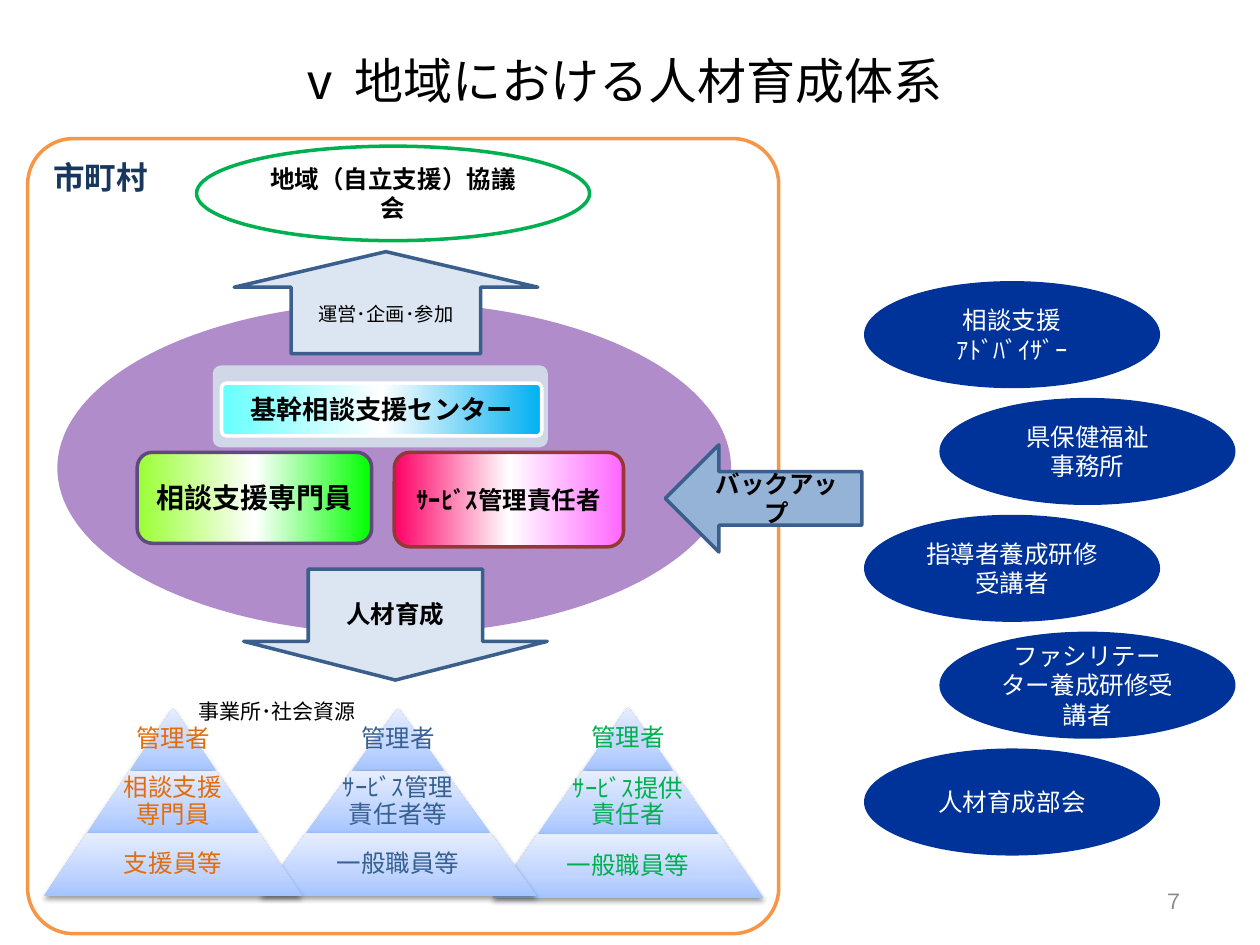
from lxml import etree
from pptx import Presentation
from pptx.dml.color import RGBColor
from pptx.enum.shapes import MSO_SHAPE
from pptx.enum.text import MSO_ANCHOR, PP_ALIGN
from pptx.oxml.ns import qn
from pptx.util import Pt

ELLIPSE = MSO_SHAPE.OVAL
ROUNDED = MSO_SHAPE.ROUNDED_RECTANGLE
TRAPEZOID = MSO_SHAPE.TRAPEZOID
UP_ARROW = MSO_SHAPE.UP_ARROW
DOWN_ARROW = MSO_SHAPE.DOWN_ARROW
LEFT_ARROW = MSO_SHAPE.LEFT_ARROW
TOP, MIDDLE = MSO_ANCHOR.TOP, MSO_ANCHOR.MIDDLE
LEFT, CENTER, RIGHT = PP_ALIGN.LEFT, PP_ALIGN.CENTER, PP_ALIGN.RIGHT

BLACK, WHITE, NAVY = "000000", "FFFFFF", "003399"
ARROW_FILL, ARROW_LINE = "DCE6F2", "3A5F8C"
PYRAMID_STOPS = [(0, "A4C4FF"), (35, "BFD4FF"), (100, "E6EEFF")]


def color(value):
    """Turn a hex string into a colour."""
    return RGBColor.from_string(value)


def add_color_xml(parent, value, opacity=100):
    """Add a colour element with an optional opacity percentage."""
    element = etree.SubElement(parent, qn("a:srgbClr"), val=value)
    if opacity < 100:
        etree.SubElement(element, qn("a:alpha"), val=str(opacity * 1000))


def write_text(shape, text, size=14, fill=BLACK, bold=False, font="Calibri",
               align=CENTER, anchor=MIDDLE, spacing=None, inset=None):
    """Write text into a shape, one paragraph for each line."""
    frame = shape.text_frame
    frame.word_wrap = True
    frame.vertical_anchor = anchor
    if inset is not None:
        frame.margin_left = frame.margin_right = Pt(inset)
        frame.margin_top = frame.margin_bottom = Pt(inset)
    for index, line in enumerate(text.split("\n")):
        paragraph = frame.add_paragraph() if index else frame.paragraphs[0]
        paragraph.alignment = align
        if spacing:
            paragraph.line_spacing = spacing
        run = paragraph.add_run()
        run.text = line
        run.font.name = font
        run.font.size = Pt(size)
        run.font.bold = bold
        run.font.color.rgb = color(fill)


def add_text(slide, left, top, width, height, text, **text_format):
    """Add a text box."""
    box = slide.shapes.add_textbox(Pt(left), Pt(top), Pt(width), Pt(height))
    write_text(box, text, **text_format)


def add_shape(slide, kind, left, top, width, height, fill=None, line=None, adjust=()):
    """Add a flat shape with an optional fill, outline and adjustments."""
    shape = slide.shapes.add_shape(kind, Pt(left), Pt(top), Pt(width), Pt(height))
    shape.shadow.inherit = False
    for index, value in enumerate(adjust):
        shape.adjustments[index] = value
    if fill:
        shape.fill.solid()
        shape.fill.fore_color.rgb = color(fill)
    else:
        shape.fill.background()
    if line:
        shape.line.color.rgb = color(line)
        shape.line.width = Pt(2)
    else:
        shape.line.fill.background()
    return shape


def set_gradient(shape, stops, angle):
    """Fill a shape with a linear gradient."""
    shape.fill.gradient()
    shape.fill.gradient_angle = angle
    stop_list = shape._element.spPr.find(qn("a:gradFill")).find(qn("a:gsLst"))
    for stop in list(stop_list):
        stop_list.remove(stop)
    for position, value in stops:
        add_color_xml(etree.SubElement(stop_list, qn("a:gs"), pos=str(position * 1000)), value)


def set_opacity(shape, value, opacity):
    """Make a solid fill partly transparent."""
    solid = shape._element.spPr.find(qn("a:solidFill"))
    solid.remove(solid[0])
    add_color_xml(solid, value, opacity)


def add_shadow(shape):
    """Give a shape a soft shadow below it."""
    effects = shape._element.spPr.find(qn("a:effectLst"))
    shadow = etree.SubElement(effects, qn("a:outerShdw"), blurRad=str(Pt(3.1)),
                              dist=str(Pt(1.6)), dir="5400000", rotWithShape="0")
    add_color_xml(shadow, BLACK, 38)


def draw_pyramid(slide, left, top, width, height, labels, text_color):
    """Draw a pyramid of equal tiers, from the peak down."""
    count = len(labels)
    tier_height = height / count
    for level, label in enumerate(labels):
        tier_width = width * (level + 1) / count
        tier_left = left + (width - tier_width) / 2
        tier_top = top + level * tier_height
        tier = add_shape(slide, TRAPEZOID, tier_left, tier_top, tier_width, tier_height,
                         fill=WHITE, adjust=[width / height / 2])
        set_gradient(tier, PYRAMID_STOPS, 90)
        add_shadow(tier)
        margin = tier_width * 0.175 if level else 0
        add_text(slide, tier_left + margin, tier_top, tier_width - 2 * margin, tier_height,
                 label, fill=text_color, spacing=0.9, inset=1.4)


def draw_role(slide, left, top, width, height, text, colors, line=WHITE, size=14, **options):
    """Draw a rounded role box that fades to white in the middle."""
    role = add_shape(slide, ROUNDED, left, top, width, height, fill=WHITE, line=line, **options)
    right_color, left_color = colors
    set_gradient(role, [(0, right_color), (50, WHITE), (100, left_color)], 180)
    write_text(role, text, size=size, bold=True, inset=2)


def draw_municipality(slide, left, top, width, height):
    """Draw the municipality frame with its council, centre and pyramids."""
    frame = add_shape(slide, ROUNDED, left, top, width, height, WHITE, "F79646", [0.061])
    write_text(frame, "市町村", size=18, fill="17375E", bold=True, align=LEFT, anchor=TOP)
    core = add_shape(slide, ELLIPSE, left + 17, top + 93.6, 385, 189.4, "7030A0")
    set_opacity(core, "7030A0", 55)
    council = add_shape(slide, ELLIPSE, left + 96.5, top + 4.3, 224.6, 54, WHITE, "00B050")
    write_text(council, "地域（自立支援）協議会", bold=True)
    resources = add_shape(slide, ELLIPSE, left + 59, top + 309.6, 167, 34.6)
    write_text(resources, "事業所･社会資源", size=12)
    upward = add_shape(slide, UP_ARROW, left + 118, top + 64.6, 173.5, 58.3,
                       ARROW_FILL, ARROW_LINE, [0.624, 0.349])
    write_text(upward, "運営･企画･参加", size=11)
    downward = add_shape(slide, DOWN_ARROW, left + 123.4, top + 246, 173.5, 63.4,
                         ARROW_FILL, ARROW_LINE, [0.574, 0.349])
    write_text(downward, "人材育成", bold=True)

    draw_pyramid(slide, left + 265.6, top + 324.7, 155, 109.4,
                 ["管理者", "ｻｰﾋﾞｽ提供責任者", "一般職員等"], "00B050")
    draw_pyramid(slide, left + 132.5, top + 325.4, 158.4, 107.4,
                 ["管理者", "ｻｰﾋﾞｽ管理責任者等", "一般職員等"], "376092")
    draw_pyramid(slide, left + 9.3, top + 325.4, 147.6, 107.4,
                 ["管理者", "相談支援専門員", "支援員等"], "E46C0A")

    draw_role(slide, left + 209.5, top + 179.3, 131, 54, "ｻｰﾋﾞｽ管理責任者",
              ("FF66FF", "FF0066"), line="953735")
    draw_role(slide, left + 62.6, top + 179.3, 134, 52, "相談支援専門員",
              ("00FF00", "99FF33"), line="604A7B", size=16)
    add_shape(slide, ROUNDED, left + 105.8, top + 129.6, 191.5, 46.8, "D0D8E8", adjust=[0.1])
    draw_role(slide, left + 110.8, top + 139.7, 183, 30.2, "基幹相談支援センター",
              ("00B0F0", "66FFFF"), size=15, adjust=[0.1])


def draw_supporters(slide, left, top, width, height, names):
    """Draw the supporters as ellipses staggered left and right."""
    item_width, item_height = 169.2, 61.2
    pitch = (height - item_height) / (len(names) - 1)
    for index, name in enumerate(names):
        offset = (width - item_width) * (index % 2)
        supporter = add_shape(slide, ELLIPSE, left + offset, top + index * pitch,
                              item_width, item_height, NAVY)
        write_text(supporter, name, fill=WHITE)


def main():
    """Build the slide and save it."""
    presentation = Presentation()
    presentation.slide_width, presentation.slide_height = Pt(720), Pt(540)
    slide = presentation.slides.add_slide(presentation.slide_layouts[6])
    draw_municipality(slide, 15.8, 79.2, 429.2, 454.3)
    add_text(slide, 144.7, 20.9, 417.6, 54, "ⅴ 地域における人材育成体系",
             size=28, font="Noto Sans CJK JP", spacing=0.9)
    backup = add_shape(slide, LEFT_ARROW, 380.2, 254.2, 112.3, 61.2, "95B3D7", ARROW_LINE)
    write_text(backup, "バックアップ", bold=True)
    draw_supporters(slide, 493.7, 160.6, 212.3, 328.3,
                    ["相談支援\nｱﾄﾞﾊﾞｲｻﾞｰ", "県保健福祉\n事務所", "指導者養成研修受講者",
                     "ファシリテーター養成研修受講者", "人材育成部会"])
    add_text(slide, 516.2, 500.4, 167.8, 28.8, "７", size=12, fill="8C8C8C", align=RIGHT)
    presentation.save("out.pptx")


if __name__ == "__main__":
    main()
